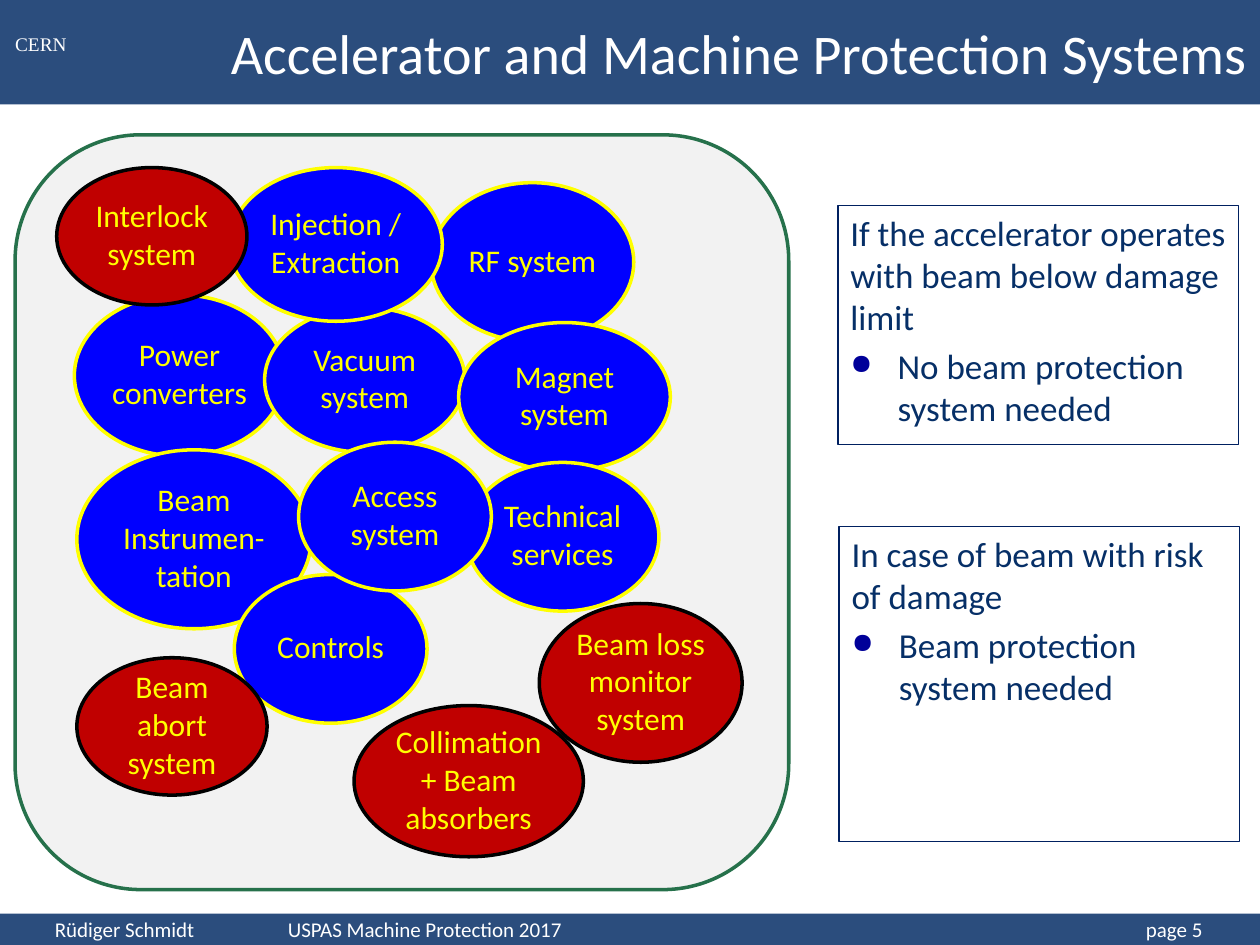
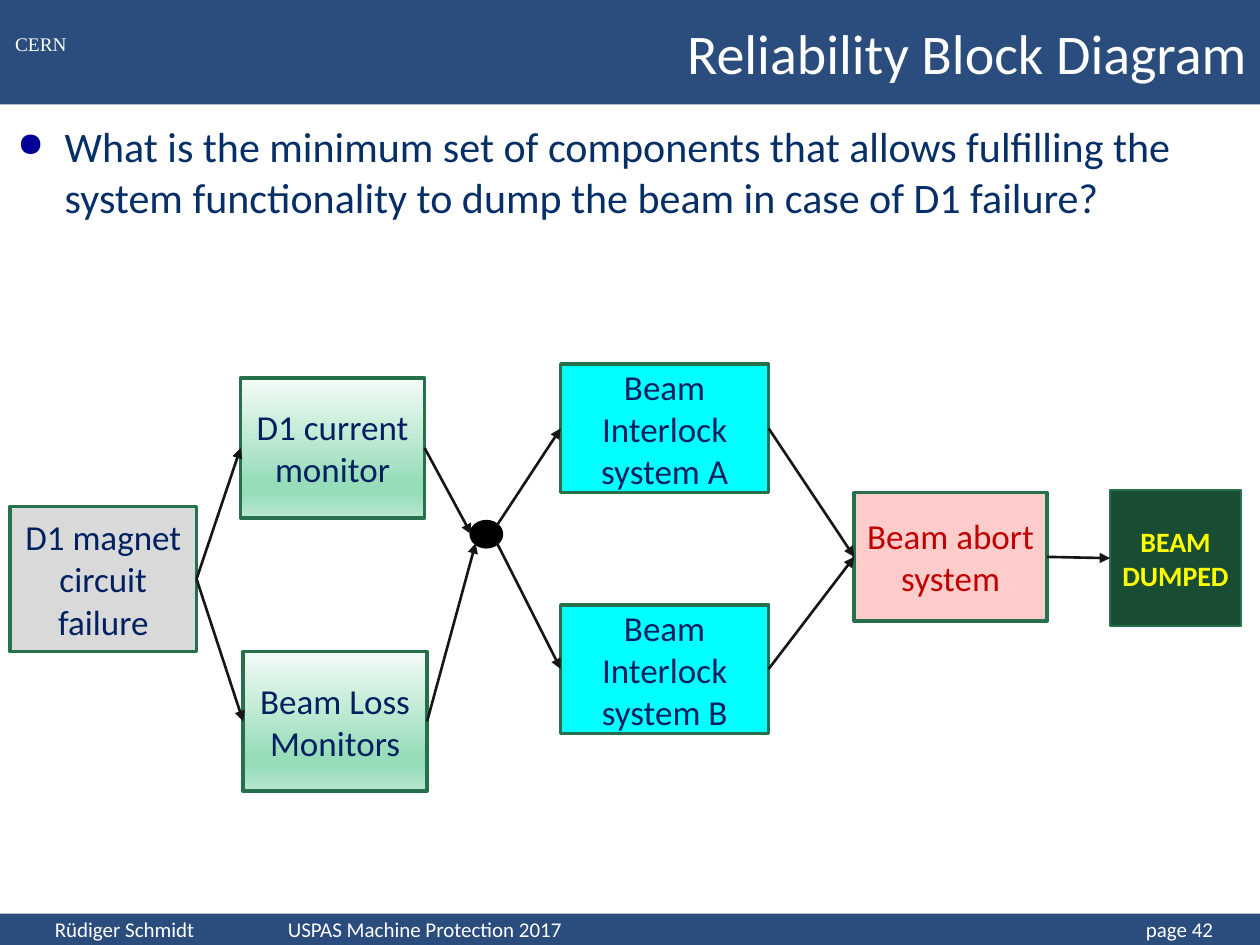
from math import sqrt

from lxml import etree
from pptx import Presentation
from pptx import util as u
from pptx.dml.color import RGBColor
from pptx.enum import shapes, text
from pptx.oxml.ns import qn

NAVY = RGBColor(0x06, 0x2F, 0x67)
INK = RGBColor(0x00, 0x20, 0x60)
DOT = RGBColor(0x00, 0x00, 0x99)
WHITE = RGBColor(0xFF, 0xFF, 0xFF)
BLACK = RGBColor(0x00, 0x00, 0x00)
BLUE = RGBColor(0x00, 0x00, 0xFF)
YELLOW = RGBColor(0xFF, 0xFF, 0x00)
RED = RGBColor(0xC0, 0x00, 0x00)
GREEN = RGBColor(0x26, 0x71, 0x4B)
FOREST = RGBColor(0x19, 0x4D, 0x33)
CYAN = RGBColor(0x00, 0xFF, 0xFF)
PINK = RGBColor(0xFF, 0xCC, 0xCC)
PALE = RGBColor(0xF2, 0xF2, 0xF2)
GREY = RGBColor(0xD9, 0xD9, 0xD9)
ARROW = RGBColor(0x16, 0x16, 0x16)
MINT = [(0, "F4FBF7"), (74, "98DDBA"), (83, "98DDBA"), (100, "BAE8D1")]

RECT = shapes.MSO_SHAPE.RECTANGLE
OVAL = shapes.MSO_SHAPE.OVAL
ROUND = shapes.MSO_SHAPE.ROUNDED_RECTANGLE
LEFT, MID, RIGHT = text.PP_ALIGN.LEFT, text.PP_ALIGN.CENTER, text.PP_ALIGN.RIGHT
TOP, CORE = text.MSO_ANCHOR.TOP, text.MSO_ANCHOR.MIDDLE

prs = Presentation()
prs.slide_width, prs.slide_height = u.Inches(10), u.Inches(7.5)
COL, ROW = prs.slide_width / 100, prs.slide_height / 75
HEAD, FOOT = 8.3, 2.5


def box(page, kind, at, words="", fill=None, edge=None, weight=2, size=18,
        color=INK, align=MID, anchor=CORE, pad=(1, 0.5, 1, 0.5),
        face="Calibri", bold=False):
    """Place a shape, or a text box if kind is None; at and pad count grid cells."""
    x, y, w, h = at
    place = [int(n) for n in (x * COL, y * ROW, w * COL, h * ROW)]
    if kind is None:
        item = page.shapes.add_textbox(*place)
    else:
        item = page.shapes.add_shape(kind, *place)
        item.shadow.inherit = False
    if fill is MINT:
        item.fill.gradient()
        item.fill.gradient_angle = 270
        stops = item.element.spPr.find(qn("a:gradFill")).find(qn("a:gsLst"))
        stops.clear()
        for pos, tint in MINT:
            stop = etree.SubElement(stops, qn("a:gs"), pos=str(pos * 1000))
            etree.SubElement(stop, qn("a:srgbClr"), val=tint)
    elif fill is not None:
        item.fill.solid()
        item.fill.fore_color.rgb = fill
    else:
        item.fill.background()
    if edge is not None:
        item.line.color.rgb = edge
        item.line.width = u.Pt(weight)
    else:
        item.line.fill.background()
    frame = item.text_frame
    frame.word_wrap, frame.vertical_anchor = True, anchor
    for side, cells in zip(("left", "top", "right", "bottom"), pad):
        setattr(frame, "margin_" + side, int(cells * COL))
    frame.text = words
    look = {"name": face, "size": u.Pt(size), "bold": bold}
    for par in frame.paragraphs:
        par.alignment = align
        for key, value in look.items():
            setattr(par.font, key, value)
        par.font.color.rgb = color
    return item


def mark(page, at, lead, point, size, **look):
    """Place a box with an optional lead line and a bulleted point."""
    lines = [lead, point] if lead else [point]
    item = box(page, RECT, at, "\n".join(lines), size=size, color=NAVY,
               align=LEFT, anchor=TOP, **look)
    par = item.text_frame.paragraphs[-1]
    if lead:
        par.space_before = u.Pt(size / 5)
    props = par._p.get_or_add_pPr()
    indent = int(3.75 * COL)
    props.set("marL", str(indent))
    props.set("indent", str(-indent))
    font = props.find(qn("a:defRPr"))
    tint = etree.Element(qn("a:buClr"))
    etree.SubElement(tint, qn("a:srgbClr"), val=str(DOT))
    scale = etree.Element(qn("a:buSzPct"), val="80000")
    sign = etree.Element(qn("a:buChar"), char="●")
    for part in (tint, scale, sign):
        font.addprevious(part)


# Shared frame: bands, mark, footer and title
pages = []
for name, number in (("Accelerator and Machine Protection Systems", 5),
                     ("Reliability Block Diagram", 42)):
    page = prs.slides.add_slide(prs.slide_layouts[5])
    pages.append(page)
    for top, high in ((0, HEAD), (75 - FOOT, FOOT)):
        band = box(page, RECT, (0, top, 100, high), fill=NAVY)
        hue = band.element.spPr.find(qn("a:solidFill"))[0]
        etree.SubElement(hue, qn("a:alpha"), val="85000")
    box(page, None, (0, 2, 6.5, 2.9), "CERN", size=11, color=WHITE,
        face="Times New Roman", pad=(0, 0, 0, 0))
    foot = box(page, None, (0, 75 - FOOT, 100, FOOT),
               f"Rüdiger Schmidt\tUSPAS Machine Protection 2017\tpage {number}",
               size=12, color=WHITE, align=LEFT, pad=(4.35, 0, 0, 0))
    props = foot.text_frame.paragraphs[0]._p.get_or_add_pPr()
    tabs = etree.Element(qn("a:tabLst"))
    for stop in (18.5, 86.6):
        etree.SubElement(tabs, qn("a:tab"), pos=str(int(stop * COL)), algn="l")
    props.find(qn("a:defRPr")).addprevious(tabs)

    title = page.shapes.title
    title.element.getparent().append(title.element)
    spot = {"left": HEAD * COL, "top": 0, "width": (100 - HEAD) * COL,
            "height": HEAD * ROW}
    for key, value in spot.items():
        setattr(title, key, int(value))
    title.text_frame.text = name
    title.text_frame.vertical_anchor = CORE
    par = title.text_frame.paragraphs[0]
    par.alignment = RIGHT
    for key, value in {"name": "Calibri", "size": u.Pt(32)}.items():
        setattr(par.font, key, value)
    par.font.color.rgb = WHITE

# Slide 1: systems of the accelerator, protection in red
page = pages[0]
box(page, ROUND, (1.2, 10.7, 61.4, 59.9), fill=PALE, edge=GREEN)
plant = [
    ("Power converters", 5.9, 23.4, 16.7, 12.8),
    ("Vacuum system", 21, 24.4, 15.9, 11.5),
    ("RF system", 34.2, 14.5, 16.1, 12.6),
    ("Magnet system", 36.4, 25.6, 16.8, 11.8),
    ("Beam Instrumen- tation", 6.1, 35.7, 18.6, 14.2),
    ("Controls", 18.6, 45.6, 15.3, 11.8),
    ("Injection / Extraction", 18.2, 13.3, 16.9, 12.2),
    ("Technical services", 37, 36.7, 15.3, 11.8),
    ("Access system", 23.7, 35.1, 15.3, 11.8),
]
guard = [
    ("Beam loss monitor system", 42.8, 47.9, 16.1, 12.6),
    ("Interlock system", 4.5, 13.3, 15.1, 10.9),
    ("Beam abort system", 6.1, 52.2, 15.1, 10.9),
    ("Collimation + Beam absorbers", 28.1, 56, 18.2, 12),
]
for group, fill, edge in ((plant, BLUE, YELLOW), (guard, RED, BLACK)):
    for name, *at in group:
        box(page, OVAL, at, name, fill, edge, color=YELLOW,
            pad=(0.4, 0.4, 0.4, 0.8))
for at, lead, point in (
        ((66.5, 16.3, 31.8, 19),
         "If the accelerator operates with beam below damage limit",
         "No beam protection system needed"),
        ((66.6, 41.8, 31.8, 25),
         "In case of beam with risk of damage",
         "Beam protection system needed")):
    mark(page, at, lead, point, 20, edge=INK, weight=0.75)

# Slide 2: reliability chain from failure to dump
page = pages[1]
mark(page, (0.4, 9.1, 96.1, 8.8), "",
     "What is the minimum set of components that allows fulfilling the "
     "system functionality to dump the beam in case of D1 failure?",
     24, fill=WHITE)
blocks = {
    "fail": ("D1 magnet circuit\nfailure", (0.8, 40.2, 14.8, 11.5), GREY, INK),
    "meter": ("D1 current monitor", (19.1, 30, 14.6, 11.1), MINT, INK),
    "loss": ("Beam Loss Monitors", (19.3, 51.7, 14.6, 11.1), MINT, INK),
    "lock a": ("Beam Interlock system A", (44.5, 28.9, 16.5, 10.2), CYAN, INK),
    "lock b": ("Beam Interlock system B", (44.5, 48, 16.5, 10.2), CYAN, INK),
    "abort": ("Beam abort system", (67.8, 39.1, 15.3, 10.2), PINK, RED),
}
nodes = {key: box(page, RECT, at, words, fill, GREEN, size=20, color=color)
         for key, (words, at, fill, color) in blocks.items()}
nodes["dump"] = box(page, RECT, (88.1, 38.9, 10.4, 10.8), "BEAM DUMPED", FOREST,
                    GREEN, 1, 16, YELLOW, bold=True, pad=(0.4, 0.5, 0.4, 0.5))
hub = box(page, OVAL, (37.4, 41.4, 2.4, 2), fill=BLACK, edge=BLACK)
midx, midy = hub.left + hub.width / 2, hub.top + hub.height / 2
dx, dy = hub.width / sqrt(8), hub.height / sqrt(8)
ports = {
    "hub in": (hub.left, midy),
    "hub low in": (midx - dx, midy + dy),
    "hub up": (midx + dx, midy - dy),
    "hub down": (midx + dx, midy + dy),
}
for start, end in (("fail", "meter"), ("fail", "loss"),
                   ("meter", "hub in"), ("loss", "hub low in"),
                   ("hub up", "lock a"), ("hub down", "lock b"),
                   ("lock a", "abort"), ("lock b", "abort"),
                   ("abort", "dump")):
    ends = [int(n) for key in (start, end) for n in ports.get(key, (0, 0))]
    link = page.shapes.add_connector(shapes.MSO_CONNECTOR.STRAIGHT, *ends)
    if start in nodes:
        link.begin_connect(nodes[start], 3)
    if end in nodes:
        link.end_connect(nodes[end], 1)
    link.line.color.rgb = ARROW
    link.line.width = u.Pt(1.5)
    etree.SubElement(link.line._get_or_add_ln(), qn("a:tailEnd"), type="triangle")
    etree.SubElement(link.element.spPr, qn("a:effectLst"))

prs.save("out.pptx")
